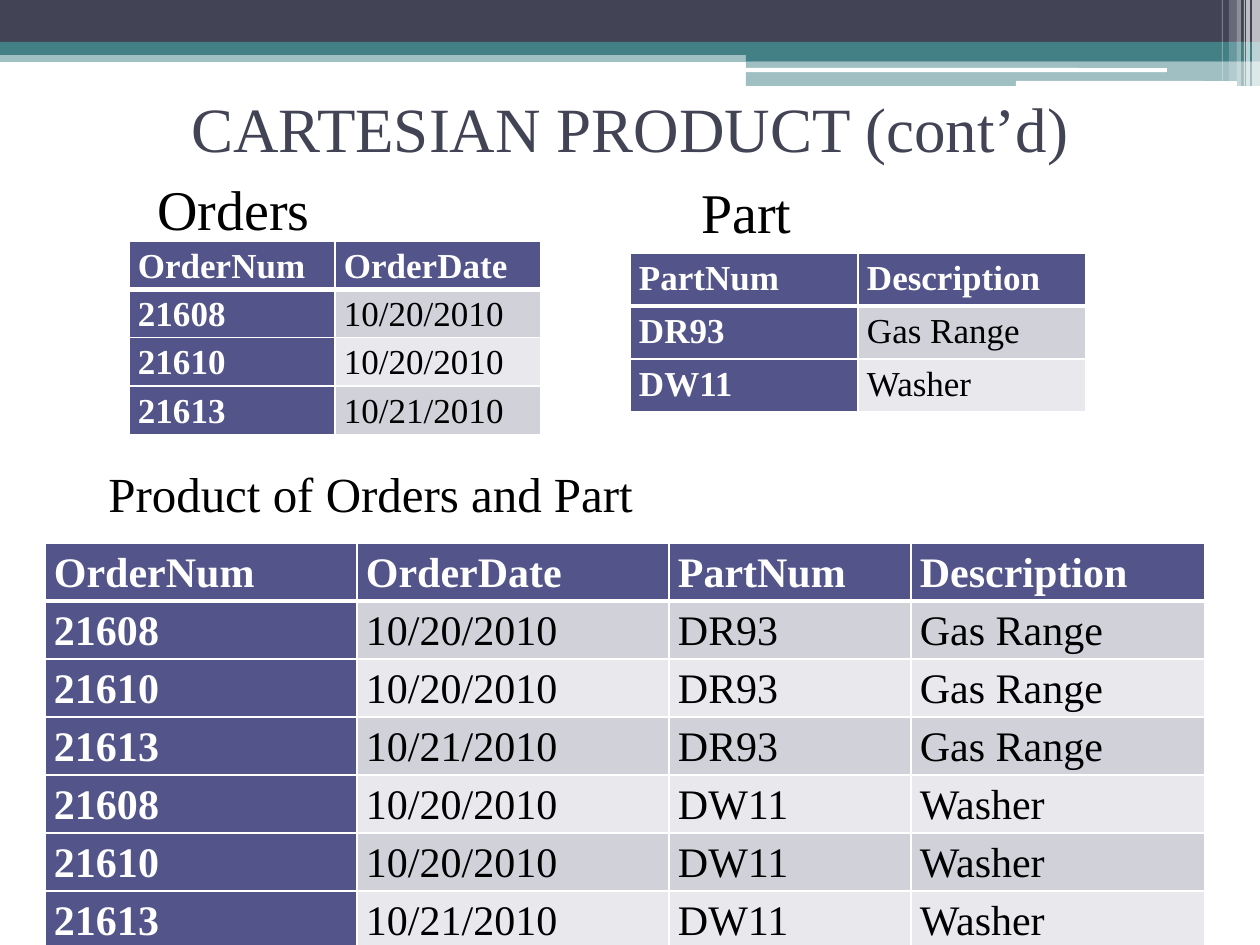
import dataclasses
import itertools

import pptx
import pptx.dml.color
import pptx.enum.shapes
import pptx.enum.text
import pptx.oxml
import pptx.oxml.ns
import pptx.util

SHAPE = pptx.enum.shapes.MSO_SHAPE
ALIGN = pptx.enum.text.PP_ALIGN


@dataclasses.dataclass(frozen=True)
class Theme:
    font: str = "Times New Roman"
    navy: str = "424456"
    teal: str = "438086"
    white: str = "FFFFFF"
    black: str = "000000"
    head: str = "53548A"
    bands: tuple = ("D1D1DA", "E9E9ED")
    title: int = 36
    label: int = 32
    caption: int = 28
    small: int = 20
    large: int = 24


def px(n):
    return pptx.util.Emu(round(n * 914400 / 126))


def rgb(color):
    return pptx.dml.color.RGBColor.from_string(color)


def write(tf, text, *, font, size, color, bold=False, align=ALIGN.LEFT, spacing=None):
    p = tf.paragraphs[0]
    p.alignment = align
    p.line_spacing = spacing
    r = p.add_run()
    r.text = text
    r.font.name = font
    r.font.size = pptx.util.Pt(size)
    r.font.bold = bold
    r.font.color.rgb = rgb(color)


class SlideBuilder:
    def __init__(self, s, theme):
        self.s = s
        self.theme = theme

    def bar(self, x, y, w, h, color, alpha=100, kind=SHAPE.RECTANGLE):
        sp = self.s.shapes.add_shape(kind, px(x), px(y), px(w), px(h))
        sp.shadow.inherit = False
        sp.line.fill.background()
        sp.fill.solid()
        sp.fill.fore_color.rgb = rgb(color)
        if alpha < 100:
            clr = sp.fill._xPr.find(".//" + pptx.oxml.ns.qn("a:srgbClr"))
            clr.append(pptx.oxml.parse_xml(
                f'<a:alpha {pptx.oxml.ns.nsdecls("a")} val="{alpha * 1000}"/>'))

    def text(self, x, y, w, h, text, size, color, inset, align=ALIGN.LEFT):
        tf = self.s.shapes.add_textbox(px(x), px(y), px(w), px(h)).text_frame
        tf.word_wrap = True
        tf.margin_top = px(inset)
        tf.margin_bottom = 0
        write(tf, text, font=self.theme.font, size=size, color=color, align=align)

    def border(self, cell, side, width):
        cell._tc.get_or_add_tcPr().append(pptx.oxml.parse_xml(
            f'<a:{side} {pptx.oxml.ns.nsdecls("a")} w="{pptx.util.Pt(width)}">'
            f'<a:solidFill><a:srgbClr val="{self.theme.white}"/></a:solidFill></a:{side}>'))

    def cell(self, cell, text, row, col, size):
        t = self.theme
        keyed = row == 0 or col == 0
        cell.margin_left = cell.margin_right = px(9)
        cell.margin_top = cell.margin_bottom = 0
        write(cell.text_frame, text, font=t.font, size=size, bold=keyed,
              color=t.white if keyed else t.black, spacing=1.15)
        self.border(cell, "lnL", 1)
        self.border(cell, "lnR", 1)
        if row == 0:
            self.border(cell, "lnT", 1)
        self.border(cell, "lnB", 3 if row == 0 else 1)
        cell.fill.solid()
        cell.fill.fore_color.rgb = rgb(t.head if keyed else t.bands[(row - 1) % 2])

    def table(self, x, y, widths, row_height, rows, size):
        tbl = self.s.shapes.add_table(len(rows), len(widths), px(x), px(y),
                                      px(sum(widths)), px(row_height * len(rows))).table
        tbl.first_row = tbl.horz_banding = False
        for column, width in zip(tbl.columns, widths):
            column.width = px(width)
        for i, values in enumerate(rows):
            tbl.rows[i].height = px(row_height)
            for j, value in enumerate(values):
                self.cell(tbl.cell(i, j), value, i, j, size)


def main():
    prs = pptx.Presentation()
    prs.slide_width, prs.slide_height = px(1260), px(945)
    t = Theme()
    b = SlideBuilder(prs.slides.add_slide(prs.slide_layouts[6]), t)

    b.bar(0, 50, 1260, 12, t.teal, 50)
    b.bar(0, 0, 1260, 42, t.navy)
    b.bar(0, 42, 1260, 13, t.teal)
    b.bar(746, 49, 514, 12, t.teal)
    b.bar(746, 61, 514, 25, t.teal, 50)
    b.bar(745, 68, 422, 4, t.white, kind=SHAPE.ROUNDED_RECTANGLE)
    b.bar(1016, 81, 221, 5, t.white, kind=SHAPE.ROUNDED_RECTANGLE)
    for x, w, h, alpha in [(1252, 8, 86, 65), (1246, 4, 86, 65), (1244, 1, 86, 60),
                           (1237, 4, 86, 40), (1229, 8, 81, 20), (1222, 1, 81, 30)]:
        b.bar(x, 0, w, h, t.white, alpha)

    b.text(63, 76, 1134, 89, "CARTESIAN PRODUCT (cont’d)", t.title, t.navy, 14, ALIGN.CENTER)

    order_head, part_head = ("OrderNum", "OrderDate"), ("PartNum", "Description")
    orders = [("21608", "10/20/2010"), ("21610", "10/20/2010"), ("21613", "10/21/2010")]
    parts = [("DR93", "Gas Range"), ("DW11", "Washer")]
    pairs = [order + part for part, order in itertools.product(parts, orders)]

    b.table(129, 241, [206, 206], 48, [order_head, *orders], t.small)
    b.table(630, 253, [228, 228], 53, [part_head, *parts], t.small)
    b.table(45, 543, [312, 312, 242, 294], 53, [order_head + part_head, *pairs], t.large)

    b.text(689, 117, 129, 165, "Part", t.label, t.black, 60)
    b.text(145, 120, 188, 161, "Orders", t.label, t.black, 55)
    b.text(96, 452, 784, 111, "Product of Orders and Part", t.caption, t.black, 12)

    prs.save("out.pptx")


if __name__ == "__main__":
    main()
